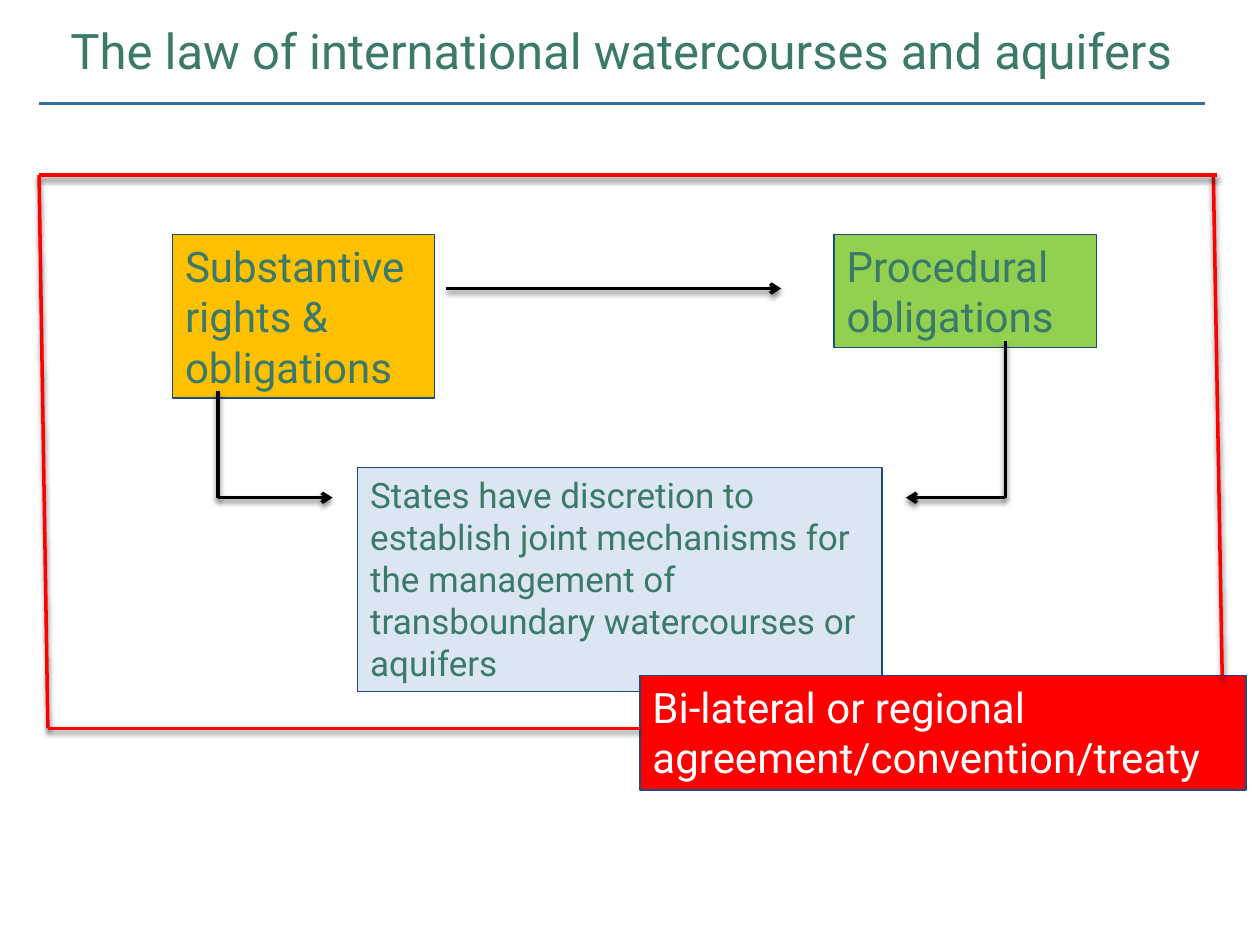
from lxml import etree
from pptx import Presentation
from pptx.dml.color import RGBColor
from pptx.enum.shapes import MSO_CONNECTOR, MSO_SHAPE
from pptx.enum.text import MSO_ANCHOR, PP_ALIGN
from pptx.oxml.ns import qn
from pptx.util import Inches, Pt

STRAIGHT = MSO_CONNECTOR.STRAIGHT
RECTANGLE = MSO_SHAPE.RECTANGLE
LEFT, JUSTIFY = PP_ALIGN.LEFT, PP_ALIGN.JUSTIFY
TOP, MIDDLE = MSO_ANCHOR.TOP, MSO_ANCHOR.MIDDLE

FONT = "Roboto"
COLOURS = {
    "text": "3B7A6A",
    "rule": "366CA6",
    "outline": "1F497D",
    "substantive": "FFC000",
    "procedural": "92D050",
    "states": "DCE6F2",
    "red": "FF0000",
    "black": "000000",
    "white": "FFFFFF",
}


def colour(name):
    return RGBColor.from_string(COLOURS[name])


def write_text(shape, text, size, ink="text", align=LEFT, anchor=TOP):
    frame = shape.text_frame
    frame.word_wrap = True
    frame.vertical_anchor = anchor
    frame.text = text
    para = frame.paragraphs[0]
    para.alignment = align
    font = para.runs[0].font
    font.name = FONT
    font.size = Pt(size)
    font.color.rgb = colour(ink)


def add_title(page, text):
    box = page.shapes.add_textbox(Inches(0.5), Inches(-0.37), Inches(10.86), Inches(1.53))
    write_text(box, text, 28, align=JUSTIFY, anchor=MIDDLE)
    frame = box.text_frame
    frame.margin_left = frame.margin_right = Inches(0.06)
    frame.margin_top = frame.margin_bottom = Inches(0.06)


def add_box(page, place, text, size, fill, ink="text"):
    box = page.shapes.add_shape(RECTANGLE, *map(Inches, place))
    box.shadow.inherit = False
    box.fill.solid()
    box.fill.fore_color.rgb = colour(fill)
    box.line.color.rgb = colour("outline")
    box.line.width = Pt(0.75)
    write_text(box, text, size, ink)


def add_line(page, start, end, ink, arrow=False, shadow=True):
    line = page.shapes.add_connector(STRAIGHT, *map(Inches, start + end))
    line.line.color.rgb = colour(ink)
    line.line.width = Pt(2)
    if arrow:
        etree.SubElement(line.line._get_or_add_ln(), qn("a:tailEnd"), type="arrow")
    effects = etree.SubElement(line._element.spPr, qn("a:effectLst"))
    if shadow:
        add_drop_shadow(effects)


def add_drop_shadow(effects):
    """Cast a half-transparent black shadow straight down."""
    outer = etree.SubElement(
        effects, qn("a:outerShdw"), blurRad=str(Pt(3)), dist=str(Pt(2.1)),
        dir="5400000", rotWithShape="0")
    shade = etree.SubElement(outer, qn("a:srgbClr"), val=COLOURS["black"])
    etree.SubElement(shade, qn("a:alpha"), val="50000")


def add_elbow(page, start, end):
    """Go straight down from start, then across to an arrowhead at end."""
    corner = (start[0], end[1])
    add_line(page, start, corner, "black")
    add_line(page, corner, end, "black", arrow=True)


def main():
    deck = Presentation()
    deck.slide_width, deck.slide_height = Inches(10), Inches(7.5)
    page = deck.slides.add_slide(deck.slide_layouts[6])

    add_title(page, "The law of international watercourses and aquifers")
    add_line(page, (0.31, 0.82), (9.56, 0.82), "rule", shadow=False)

    add_box(page, (1.37, 1.86, 2.08, 1.3), "Substantive rights & obligations",
            24, "substantive")
    add_box(page, (6.62, 1.86, 2.08, 0.9), "Procedural obligations", 24, "procedural")
    add_box(page, (2.84, 3.71, 4.16, 1.78),
            "States have discretion to establish joint mechanisms for the "
            "management of transboundary watercourses or aquifers", 20, "states")

    add_elbow(page, (1.73, 3.1), (2.64, 3.95))
    add_elbow(page, (7.98, 2.71), (7.19, 3.95))
    add_line(page, (3.54, 2.29), (6.2, 2.29), "black", arrow=True)

    add_box(page, (5.08, 5.36, 4.81, 0.91),
            "Bi-lateral or regional agreement/convention/treaty", 24, "red", "white")
    treaty_frame = [
        ((9.7, 5.36), (9.63, 1.39)),
        ((9.66, 1.39), (0.31, 1.39)),
        ((0.38, 5.78), (0.31, 1.39)),
        ((5.08, 5.78), (0.38, 5.78)),
    ]
    for start, end in treaty_frame:
        add_line(page, start, end, "red")

    deck.save("out.pptx")


if __name__ == "__main__":
    main()
